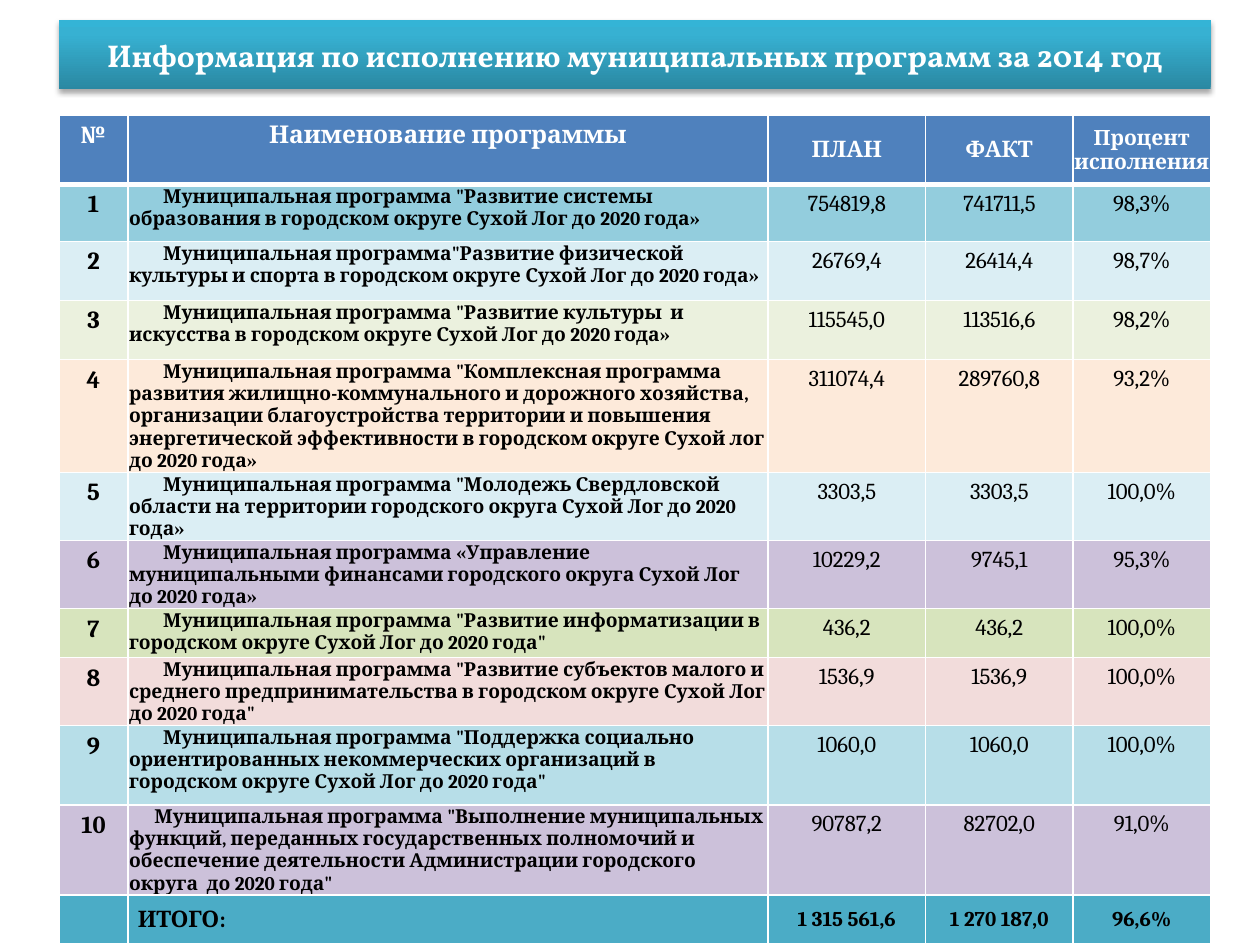
"""Builds the slide on how the 2014 municipal programmes were carried out."""
from lxml.etree import SubElement
from pptx import Presentation
from pptx.dml.color import RGBColor
from pptx.enum.text import MSO_ANCHOR as Anchor, PP_ALIGN as Align
from pptx.oxml import parse_xml
from pptx.oxml.ns import qn
from pptx.util import Pt


def paint(font, size, tone, bold=True, face="Cambria"):
    font.name, font.size, font.bold = face, Pt(size), bold
    font.color.rgb = RGBColor.from_string(tone)


def edge(cell, side, width):
    line = SubElement(cell._tc.get_or_add_tcPr(), qn(f"a:ln{side}"), w=str(Pt(width)))
    fill = SubElement(line, qn("a:solidFill"))
    SubElement(fill, qn("a:srgbClr"), val="FFFFFF")


deck = Presentation()
deck.slide_width, deck.slide_height = Pt(720), Pt(540)
slide = deck.slides.add_slide(deck.slide_layouts[5])

title = slide.shapes.title
title.left, title.top, title.width, title.height = Pt(33.8), Pt(11.5), Pt(658), Pt(39.5)
frame = title.text_frame
frame.word_wrap = True
frame.vertical_anchor = Anchor.MIDDLE
para = frame.paragraphs[0]
para.alignment = Align.CENTER
run = para.add_run()
run.text = "Информация по исполнению муниципальных программ за 2014 год"
paint(run.font, 18, "FFFFFF", face="Vollkorn")

space = 'xmlns:a="http://schemas.openxmlformats.org/drawingml/2006/main"'
stops = "".join(
    f'<a:gs pos="{pos}000"><a:srgbClr val="{tone}"/></a:gs>'
    for pos, tone in [(0, "2A88A2"), (80, "37B1D2"), (100, "34B4D6")]
)
props = title._element.spPr
props.append(parse_xml(
    f'<a:gradFill {space} rotWithShape="1"><a:gsLst>{stops}</a:gsLst>'
    '<a:lin ang="16200000" scaled="0"/></a:gradFill>'
))
props.append(parse_xml(
    f'<a:effectLst {space}><a:outerShdw blurRad="{Pt(3.1)}" dist="{Pt(1.8)}" dir="5400000" '
    'rotWithShape="0"><a:srgbClr val="000000"><a:alpha val="35000"/></a:srgbClr>'
    '</a:outerShdw></a:effectLst>'
))

head = ["№", "Наименование программы", "ПЛАН", "ФАКТ", "Процент исполнения"]
goals = [
    ('Муниципальная программа "Развитие системы образования в городском округе Сухой Лог до 2020 года»',
     "754819,8", "741711,5", "98,3%", "93CDDD", 32.5),
    ('Муниципальная программа"Развитие физической культуры и спорта в городском округе Сухой Лог до 2020 года»',
     "26769,4", "26414,4", "98,7%", "DBEEF4", 33.8),
    ('Муниципальная программа "Развитие культуры  и искусства в городском округе Сухой Лог до 2020 года»',
     "115545,0", "113516,6", "98,2%", "EBF1DE", 33.8),
    ('Муниципальная программа "Комплексная программа развития жилищно-коммунального и дорожного хозяйства, '
     "организации благоустройства территории и повышения энергетической эффективности "
     "в городском округе Сухой лог до 2020 года»",
     "311074,4", "289760,8", "93,2%", "FDEADA", 64.5),
    ('Муниципальная программа "Молодежь Свердловской области на территории городского округа '
     "Сухой Лог до 2020 года»",
     "3303,5", "3303,5", "100,0%", "DBEEF4", 38.9),
    ("Муниципальная программа «Управление муниципальными финансами городского округа "
     "Сухой Лог до 2020 года»",
     "10229,2", "9745,1", "95,3%", "CCC1DA", 38.9),
    ('Муниципальная программа "Развитие информатизации в городском округе Сухой Лог до 2020 года"',
     "436,2", "436,2", "100,0%", "D7E4BD", 28),
    ('Муниципальная программа "Развитие субъектов малого и среднего предпринимательства '
     'в городском округе Сухой Лог до 2020 года"',
     "1536,9", "1536,9", "100,0%", "F2DCDB", 38.9),
    ('Муниципальная программа "Поддержка социально ориентированных некоммерческих организаций '
     'в городском округе Сухой Лог до 2020 года"',
     "1060,0", "1060,0", "100,0%", "B7DEE8", 45.2),
    ('Муниципальная программа "Выполнение муниципальных функций, переданных государственных полномочий '
     'и обеспечение деятельности Администрации городского округа  до 2020 года"',
     "90787,2", "82702,0", "91,0%", "CCC1DA", 51.7),
]
rows = [(head, "4F81BD", 39.5)]
rows += [([str(num), *goal[:4]], *goal[4:]) for num, goal in enumerate(goals, 1)]
rows += [(["", "ИТОГО:", "1 315 561,6", "1 270 187,0", "96,6%"], "4BACC6", 27.5)]
last = len(rows) - 1
sizes = {0: [14, 14, 13, 13, 12], last: [11, 13, 12, 12, 12]}

high = sum(row[2] for row in rows)
grid = slide.shapes.add_table(len(rows), 5, Pt(33.8), Pt(66), Pt(658), Pt(high)).table
for col, width in zip(grid.columns, [39.3, 365.8, 90, 84.3, 78.6]):
    col.width = Pt(width)

for r, (words, tone, height) in enumerate(rows):
    grid.rows[r].height = Pt(height)
    for c, text in enumerate(words):
        cell = grid.cell(r, c)
        for side in "LRTB":
            thick = (r, side) in [(0, "B"), (1, "T")]
            edge(cell, side, 3 if thick else 1)
        cell.fill.solid()
        cell.fill.fore_color.rgb = RGBColor.from_string(tone)
        name = c == 1 and r > 0
        if name or (r == 0 and c > 1) or not text:
            cell.margin_left = cell.margin_right = cell.margin_top = Pt(0.7)
            cell.margin_bottom = 0
        if r == last or (r == 0 and c > 1):
            cell.vertical_anchor = Anchor.MIDDLE
        if not text:
            continue
        para = cell.text_frame.paragraphs[0]
        para.alignment = Align.LEFT if name else Align.CENTER
        if name:
            shift = {last: 5, last - 1: 14.5}.get(r, 19.5)
            ppr = para._p.get_or_add_pPr()
            ppr.set("marL", "0")
            ppr.set("indent", str(Pt(shift)))
        run = para.add_run()
        run.text = text
        size = sizes.get(r, [14, 11, 13, 13, 13])[c]
        paint(run.font, size, "000000" if r else "FFFFFF", c < 2 or r in sizes)

deck.save("out.pptx")
